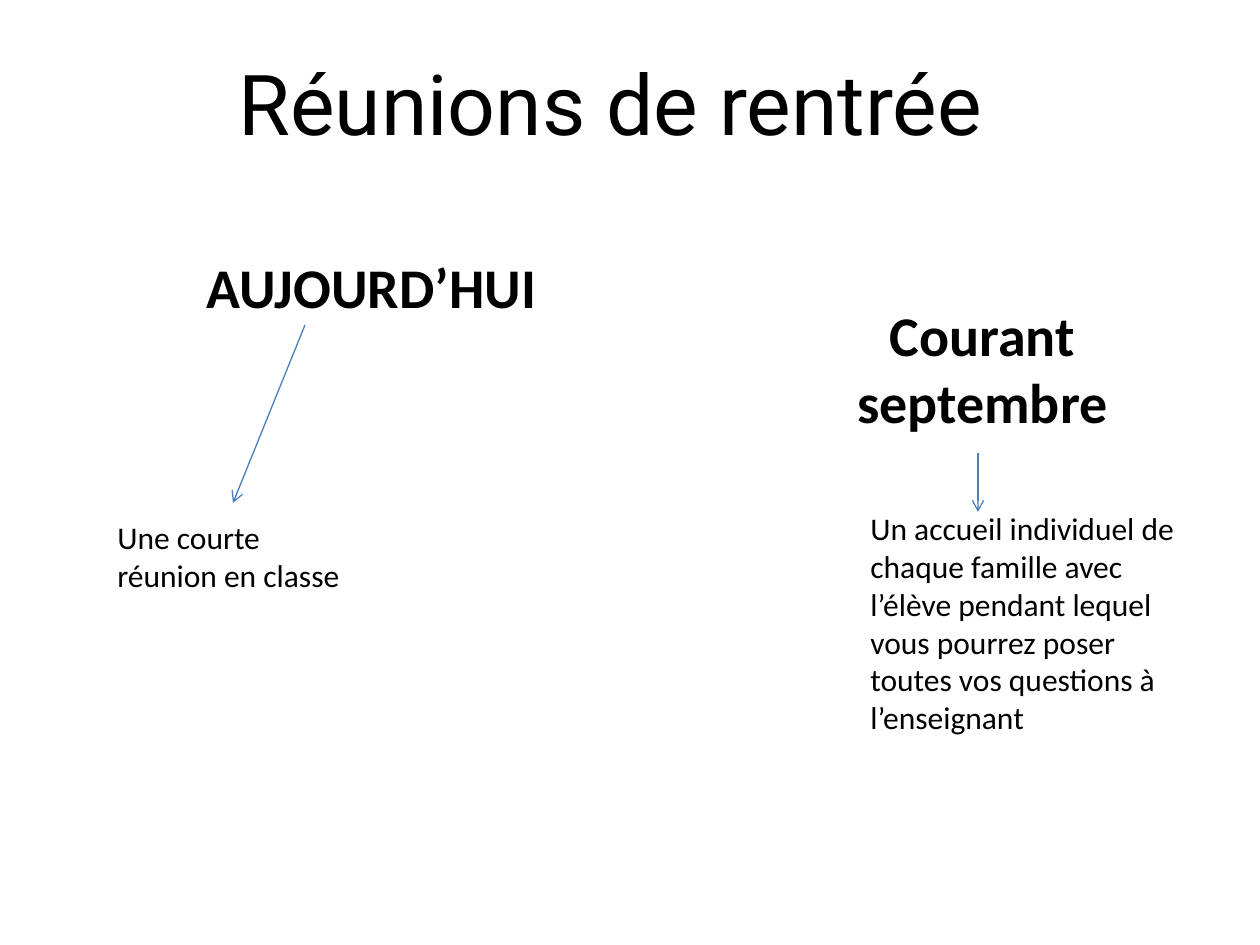
from lxml import etree
from pptx import Presentation
from pptx.dml.color import RGBColor
from pptx.enum.shapes import MSO_CONNECTOR
from pptx.enum.text import MSO_AUTO_SIZE, PP_ALIGN
from pptx.oxml.ns import qn
from pptx.util import Pt

PX = 914400 // 126
STRAIGHT = MSO_CONNECTOR.STRAIGHT
GROW = MSO_AUTO_SIZE.SHAPE_TO_FIT_TEXT
LEFT, CENTER = PP_ALIGN.LEFT, PP_ALIGN.CENTER
COLORS = {"text": "000000", "arrow": "4B7EBC"}

prs = Presentation()
prs.slide_width, prs.slide_height = 1260 * PX, 945 * PX
s = prs.slides.add_slide(prs.slide_layouts[6])

# Title, headings and descriptions: box, text, font, size, bold, alignment
texts = [
    ((59, 45, 1103, 115), "Réunions de rentrée", "Roboto", 48, False, CENTER),
    ((105, 512, 248, 127), "Une courte réunion en classe", "Calibri", 18, False, LEFT),
    ((769, 294, 427, 149), "Courant septembre", "Calibri", 32, True, CENTER),
    ((858, 503, 348, 242),
     "Un accueil individuel de chaque famille avec l’élève pendant lequel "
     "vous pourrez poser toutes vos questions à l’enseignant",
     "Calibri", 18, False, LEFT),
    ((158, 246, 427, 81), "AUJOURD’HUI", "Calibri", 32, True, CENTER),
]
for box, text, font, size, bold, align in texts:
    sp = s.shapes.add_textbox(*(v * PX for v in box))
    tf = sp.text_frame
    tf.word_wrap = True
    tf.auto_size = GROW
    p = tf.paragraphs[0]
    p.alignment = align
    r = p.add_run()
    r.text = text
    r.font.name = font
    r.font.size = Pt(size)
    r.font.bold = bold
    r.font.color.rgb = RGBColor.from_string(COLORS["text"])

# Arrows from each heading to its description
for ends in [(305, 325, 233, 503), (978, 453, 978, 512)]:
    arrow = s.shapes.add_connector(STRAIGHT, *(v * PX for v in ends))
    arrow.line.color.rgb = RGBColor.from_string(COLORS["arrow"])
    arrow.line.width = Pt(0.75)
    etree.SubElement(arrow.line._get_or_add_ln(), qn("a:tailEnd"), type="arrow")
    etree.SubElement(arrow._element.spPr, qn("a:effectLst"))

prs.save("out.pptx")
